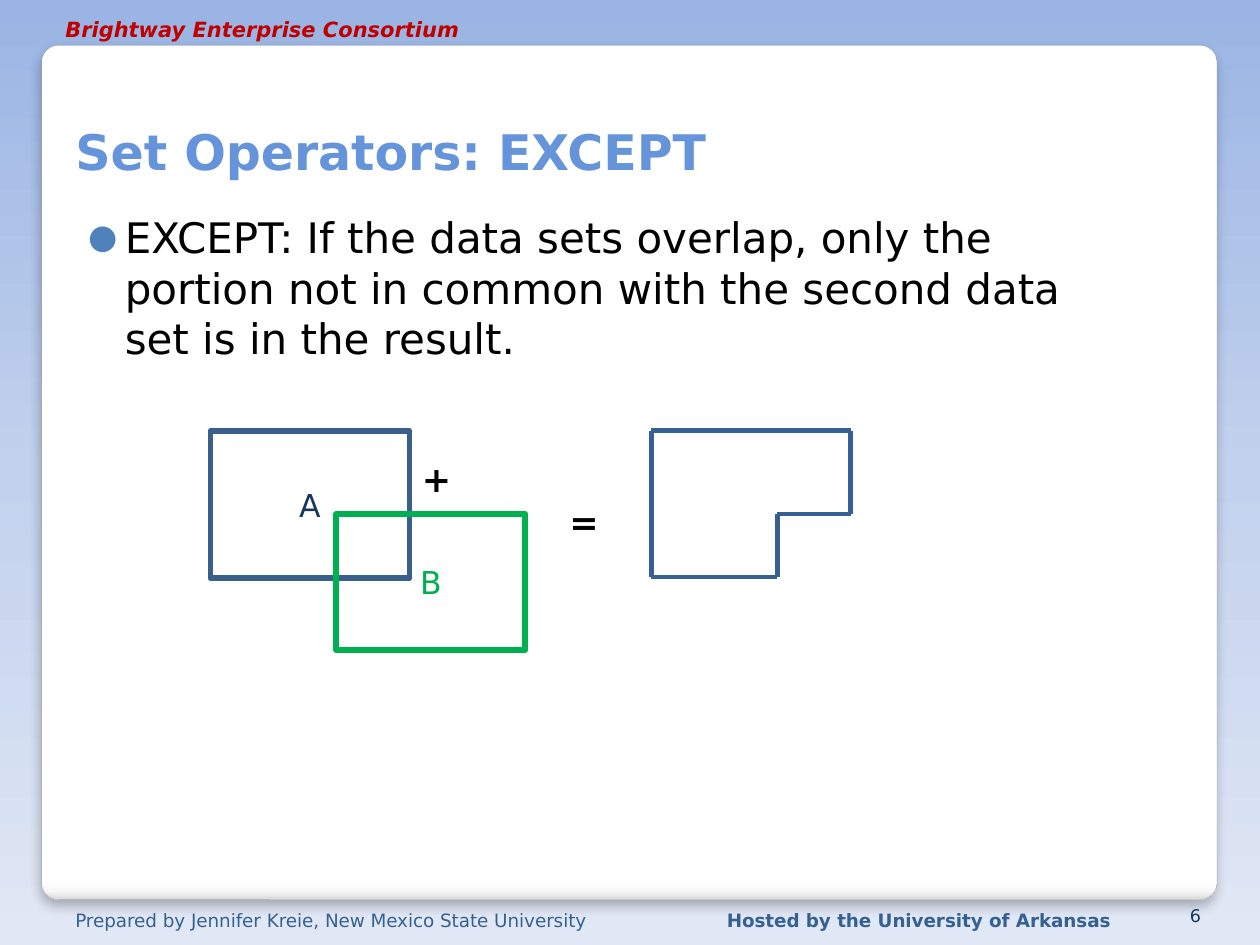
from lxml.etree import SubElement as Sub
from pptx import Presentation
from pptx.dml.color import RGBColor as Rgb
from pptx.enum.shapes import MSO_CONNECTOR as Conn, MSO_SHAPE as Shape
from pptx.enum.text import MSO_ANCHOR as Anchor, PP_ALIGN as Align
from pptx.oxml.ns import qn
from pptx.util import Inches, Pt

FONT = "DejaVu Sans"
HUES = {
    "sky": "9AB5E4", "haze": "C2D1ED", "mist": "E1E8F5",
    "white": "FFFFFF", "pale": "F7F7F7", "ash": "DADADA", "rim": "A4A4A4",
    "blue": "376092", "navy": "17375E", "steel": "3A5F8C", "green": "00B050",
    "title": "6594DA", "dot": "4F81BD", "red": "C00000", "black": "000000",
}


def hue(name):
    return Rgb.from_string(HUES[name])


def box(vals):
    return [Inches(v) for v in vals]


def apply(item, vals):
    for key, val in vals.items():
        setattr(item, key, val)


def node(base, tag, **attrs):
    return Sub(base, qn(tag), {k: str(v) for k, v in attrs.items()})


def blend(fill, root, stops):
    """Vertical gradient, top to bottom, with any number of stops."""
    fill.gradient()
    fill.gradient_angle = 270
    group = next(root.iter(qn("a:gsLst")))
    group.clear()
    for pos, name in stops:
        stop = node(group, "a:gs", pos=pos * 1000)
        node(stop, "a:srgbClr", val=HUES[name])


def write(frame, text, size, color, align=Align.LEFT, **style):
    para = frame.paragraphs[0]
    para.alignment = align
    run = para.add_run()
    run.text = text
    apply(run.font, {"name": FONT, "size": Pt(size), **style})
    run.font.color.rgb = hue(color)
    return para


def label(slide, at, text, size, color, anchor=Anchor.TOP, **style):
    frame = slide.shapes.add_textbox(*box(at)).text_frame
    apply(frame, {"word_wrap": True, "vertical_anchor": anchor})
    return frame, write(frame, text, size, color, **style)


def bullet(para):
    props = para._p.get_or_add_pPr()
    indent = Inches(0.29)
    props.set("marL", str(indent))
    props.set("indent", str(-indent))
    para.space_before = Pt(2.5)
    node(node(props, "a:buClr"), "a:srgbClr", val=HUES["dot"])
    node(props, "a:buSzPct", val=80000)
    node(props, "a:buFont", typeface=FONT)
    node(props, "a:buChar", char="●")


def panel(slide):
    card = slide.shapes.add_shape(
        Shape.ROUNDED_RECTANGLE, *box((0.33, 0.36, 9.33, 6.78)))
    card.adjustments[0] = 0.02
    props = card._element.spPr
    blend(card.fill, props,
          [(0, "white"), (98, "white"), (99, "pale"), (100, "ash")])
    card.line.color.rgb = hue("rim")
    card.line.width = Pt(0.16)
    # Soft shadow below the card
    shade = node(node(props, "a:effectLst"), "a:outerShdw", blurRad=Pt(6),
                 dist=Pt(4), dir=5400000, algn="t", rotWithShape=0)
    tint = node(shade, "a:srgbClr", val=HUES["black"])
    node(tint, "a:alpha", val=25000)


def dataset(slide, at, name, edge, color):
    rect = slide.shapes.add_shape(Shape.RECTANGLE, *box(at))
    rect.shadow.inherit = False
    rect.fill.background()
    rect.line.color.rgb = hue(edge)
    rect.line.width = Pt(3.35)
    rect.text_frame.vertical_anchor = Anchor.MIDDLE
    write(rect.text_frame, name, 18, color, Align.CENTER)


def outline(slide, points):
    for start, end in zip(points, points[1:] + points[:1]):
        edge = slide.shapes.add_connector(Conn.STRAIGHT, *box(start + end))
        edge.line.color.rgb = hue("blue")
        edge.line.width = Pt(2.75)
        node(edge._element.spPr, "a:effectLst")


def main():
    deck = Presentation()
    apply(deck, {"slide_width": Inches(10), "slide_height": Inches(7.5)})
    slide = deck.slides.add_slide(deck.slide_layouts[6])

    # Backdrop and card
    blend(slide.background.fill, slide.element,
          [(0, "sky"), (50, "haze"), (100, "mist")])
    panel(slide)

    # Header and footer
    label(slide, (0.42, 0.08, 3.33, 0.23), "Brightway Enterprise Consortium",
          12, "red", bold=True, italic=True)
    label(slide, (0.5, 7.17, 4.46, 0.23),
          "Prepared by Jennifer Kreie, New Mexico State University",
          10.5, "blue")
    label(slide, (5.67, 7.17, 3.33, 0.23),
          "Hosted by the University of Arkansas", 10.5, "blue", bold=True)
    label(slide, (9.13, 7.17, 0.5, 0.23), "6", 10, "navy",
          Anchor.BOTTOM, align=Align.RIGHT)

    # Title and body
    label(slide, (0.5, 0.33, 8.95, 1.15), "Set Operators: EXCEPT",
          28, "title", Anchor.BOTTOM, bold=True)
    frame, para = label(
        slide, (0.5, 1.58, 8.58, 5),
        "EXCEPT: If the data sets overlap, only the portion not in common "
        "with the second data set is in the result.", 24, "black")
    apply(frame, {"margin_left": Inches(0.2), "margin_top": Inches(0.1)})
    bullet(para)

    # Diagram: A + B = the part of A outside B
    dataset(slide, (1.67, 3.42, 1.58, 1.17), "A", "steel", "navy")
    dataset(slide, (2.67, 4.08, 1.5, 1.08), "B", "green", "green")
    for sign, left, top in (("+", 3.25, 3.58), ("=", 4.42, 3.92)):
        label(slide, (left, top, 0.67, 0.44), sign, 20, "black", bold=True)
    outline(slide, [(5.17, 3.42), (6.75, 3.42), (6.75, 4.08),
                    (6.17, 4.08), (6.17, 4.58), (5.17, 4.58)])

    deck.save("out.pptx")


if __name__ == "__main__":
    main()
